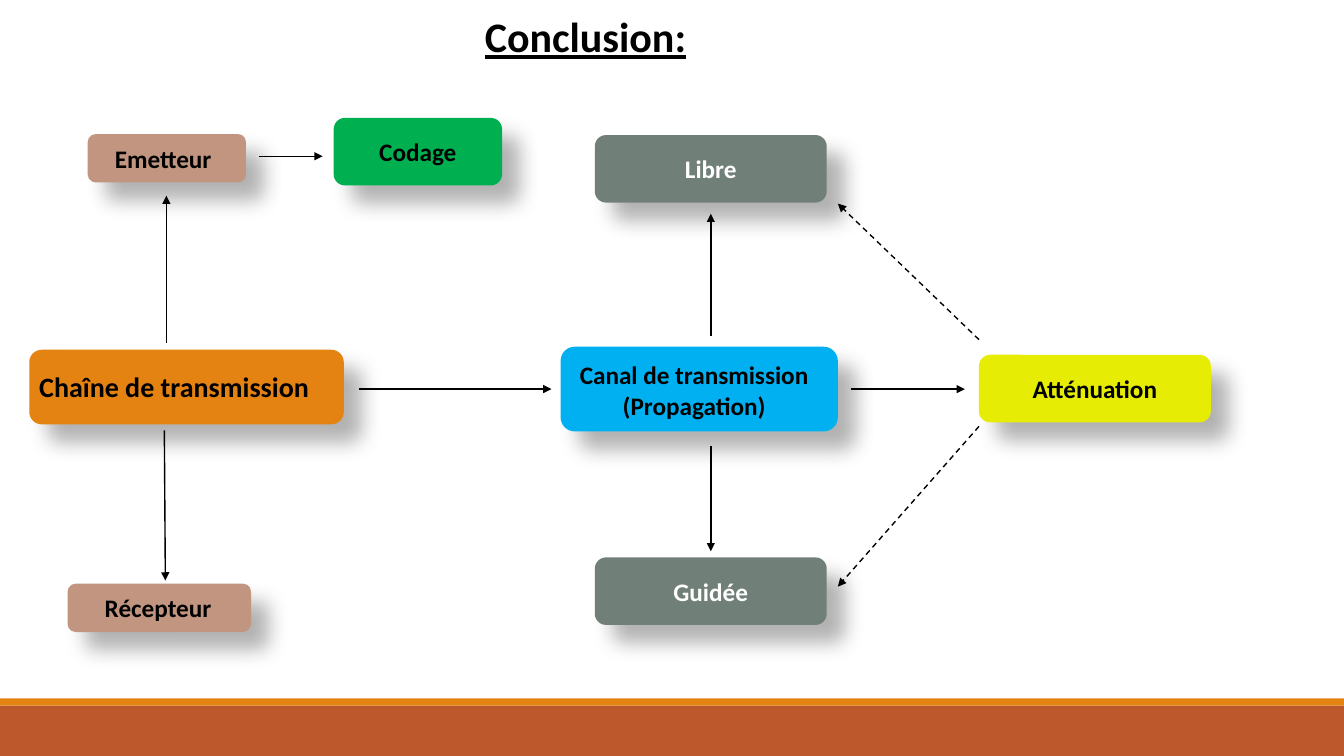
import dataclasses

import pptx
import pptx.dml.color
import pptx.enum.dml
import pptx.enum.shapes
import pptx.enum.text
import pptx.oxml
import pptx.oxml.ns
import pptx.util

PX = 9144
NS = pptx.oxml.ns.nsdecls("a")
SHAPES = pptx.enum.shapes.MSO_SHAPE
ALIGN = pptx.enum.text.PP_ALIGN


@dataclasses.dataclass(frozen=True)
class Theme:
    font: str = "Calibri"
    title: int = 30
    heading: int = 20
    label: int = 18
    black: str = "000000"
    white: str = "FFFFFF"
    rust: str = "BD582C"
    orange: str = "E48312"
    blue: str = "00B0F0"
    tan: str = "C29580"
    yellow: str = "E6EC04"
    grey: str = "717F79"
    green: str = "00B050"


def rgb(value):
    return pptx.dml.color.RGBColor.from_string(value)


def emu(*lengths):
    return [pptx.util.Emu(n * PX) for n in lengths]


class Diagram:
    def __init__(self, slide, theme):
        self.s = slide
        self.theme = theme

    def shape(self, kind, box, fill):
        sp = self.s.shapes.add_shape(kind, *emu(*box))
        sp.fill.solid()
        sp.fill.fore_color.rgb = rgb(fill)
        sp.line.fill.background()
        sp.shadow.inherit = False
        return sp

    def bar(self, box, fill):
        self.shape(SHAPES.RECTANGLE, box, fill)

    def node(self, box, fill, text="", color=None):
        sp = self.shape(SHAPES.ROUNDED_RECTANGLE, box, fill)
        blur, dist = pptx.util.Pt(15), pptx.util.Pt(18)
        effects = sp._element.spPr.find(pptx.oxml.ns.qn("a:effectLst"))
        effects.append(pptx.oxml.parse_xml(
            f'<a:outerShdw {NS} blurRad="{blur}" dist="{dist}" dir="2700000" '
            f'algn="tl" rotWithShape="0"><a:srgbClr val="{self.theme.black}">'
            '<a:alpha val="30000"/></a:srgbClr></a:outerShdw>'))
        if text:
            sp.text_frame.vertical_anchor = pptx.enum.text.MSO_ANCHOR.MIDDLE
            self.set_text(sp.text_frame, text, self.theme.label, color, ALIGN.CENTER)

    def label(self, box, text, size=None, align=ALIGN.LEFT, underline=None):
        tf = self.s.shapes.add_textbox(*emu(*box)).text_frame
        tf.auto_size = pptx.enum.text.MSO_AUTO_SIZE.SHAPE_TO_FIT_TEXT
        self.set_text(tf, text, size or self.theme.label, None, align, underline)

    def set_text(self, tf, text, size, color, align, underline=None):
        tf.word_wrap = True
        tf.text = text
        for p in tf.paragraphs:
            p.alignment = align
            p.font.name = self.theme.font
            p.font.size = pptx.util.Pt(size)
            p.font.bold = True
            p.font.underline = underline
            p.font.color.rgb = rgb(color or self.theme.black)

    def arrow(self, start, end, dashed=False):
        cx = self.s.shapes.add_connector(
            pptx.enum.shapes.MSO_CONNECTOR.STRAIGHT, *emu(*start, *end))
        cx.line.color.rgb = rgb(self.theme.black)
        cx.line.width = pptx.util.Pt(1)
        if dashed:
            cx.line.dash_style = pptx.enum.dml.MSO_LINE.DASH
        cx.line._get_or_add_ln().append(
            pptx.oxml.parse_xml(f'<a:tailEnd {NS} type="triangle"/>'))
        cx._element.spPr.append(pptx.oxml.parse_xml(f"<a:effectLst {NS}/>"))


def main():
    prs = pptx.Presentation()
    prs.slide_width, prs.slide_height = emu(1333, 750)
    theme = Theme()
    d = Diagram(prs.slides.add_slide(prs.slide_layouts[6]), theme)

    d.bar((0, 700, 1333, 50), theme.rust)
    d.bar((0, 693, 1333, 7), theme.orange)
    d.label((471, 6, 365, 61), "Conclusion:", theme.title, underline=True)

    d.node((29, 347, 312, 74), theme.orange)
    d.label((29, 362, 305, 44), "Chaîne de transmission", theme.heading)
    d.node((87, 133, 157, 48), theme.tan)
    d.label((104, 137, 142, 40), "Emetteur")
    d.node((67, 579, 182, 48), theme.tan)
    d.label((94, 583, 142, 40), "Récepteur")
    d.node((556, 344, 275, 84), theme.blue)
    d.label((533, 352, 311, 71), "Canal de transmission\n(Propagation)",
            align=ALIGN.CENTER)

    d.node((331, 117, 167, 67), theme.green, "Codage", theme.black)
    d.node((971, 352, 230, 67), theme.yellow, "Atténuation", theme.black)
    for top, text in ((134, "Libre"), (553, "Guidée")):
        d.node((590, top, 230, 67), theme.grey, text, theme.white)

    for start, end in (
        ((257, 155), (320, 155)),
        ((165, 340), (165, 194)),
        ((163, 427), (164, 576)),
        ((356, 386), (547, 386)),
        ((705, 333), (705, 212)),
        ((705, 442), (705, 547)),
        ((844, 386), (957, 386)),
    ):
        d.arrow(start, end)
    d.arrow((971, 337), (831, 202), dashed=True)
    d.arrow((971, 423), (831, 582), dashed=True)

    prs.save("out.pptx")


if __name__ == "__main__":
    main()
